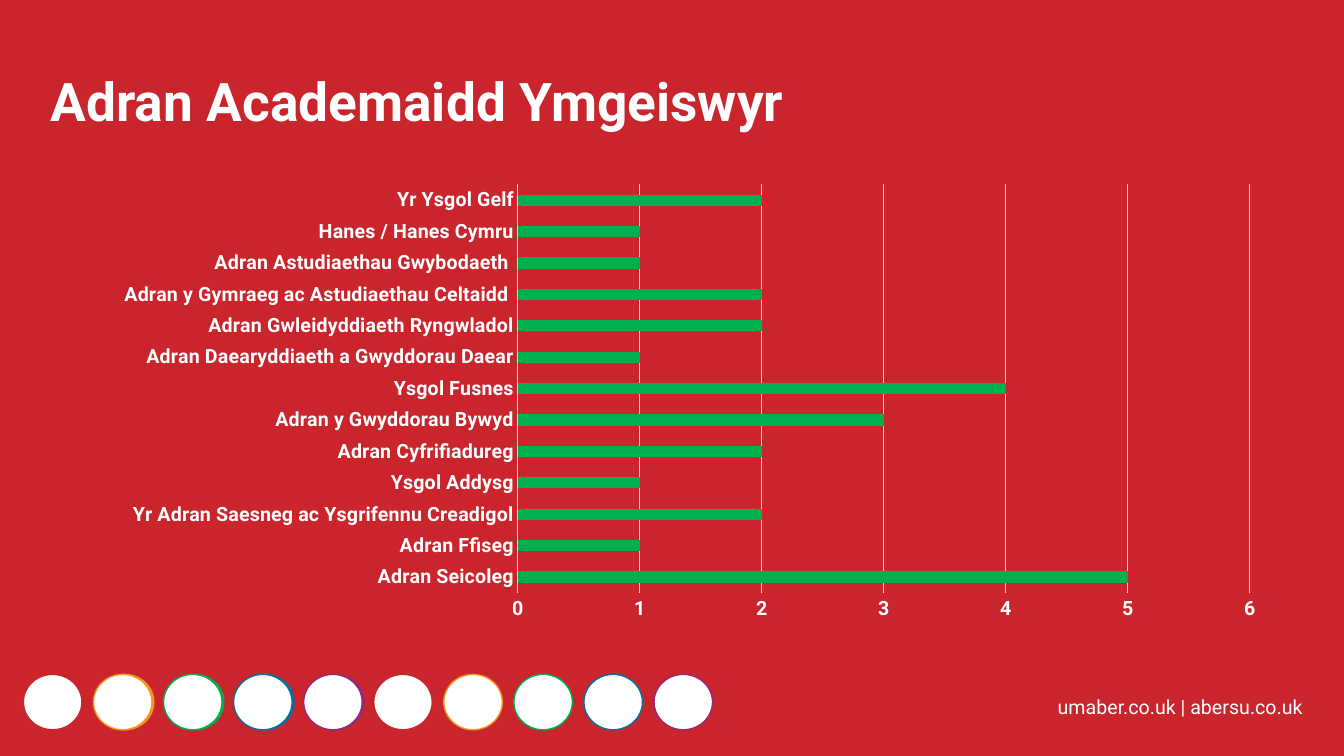
"""Build the slide on candidates' academic departments."""
from pptx import Presentation
from pptx.chart.data import CategoryChartData
from pptx.dml.color import RGBColor
from pptx.enum.chart import XL_CHART_TYPE, XL_TICK_MARK
from pptx.enum.shapes import MSO_SHAPE
from pptx.enum.text import MSO_ANCHOR, MSO_AUTO_SIZE, PP_ALIGN
from pptx.util import Pt

HEADING = "Adran Academaidd Ymgeiswyr"
WEBSITES = "umaber.co.uk | abersu.co.uk"
DEPARTMENTS = [
    ("Adran Seicoleg", 5),
    ("Adran Ffiseg", 1),
    ("Yr Adran Saesneg ac Ysgrifennu Creadigol", 2),
    ("Ysgol Addysg", 1),
    ("Adran Cyfrifiadureg", 2),
    ("Adran y Gwyddorau Bywyd", 3),
    ("Ysgol Fusnes", 4),
    ("Adran Daearyddiaeth a Gwyddorau Daear", 1),
    ("Adran Gwleidyddiaeth Ryngwladol", 2),
    ("Adran y Gymraeg ac Astudiaethau Celtaidd ", 2),
    ("Adran Astudiaethau Gwybodaeth ", 1),
    ("Hanes / Hanes Cymru", 1),
    ("Yr Ysgol Gelf", 2),
]
COLOURS = {
    "red": "CA252C",
    "orange": "F7941F",
    "green": "00AF50",
    "blue": "0171A3",
    "purple": "95277D",
    "white": "FFFFFF",
    "grid": "D9D9D9",
}
RING_COLOURS = ["red", "orange", "green", "blue", "purple"]
FONT = "Roboto"
RING_STEP, RING_TOP, RING_WIDTH, RING_HEIGHT = 50.05, 481.7, 41.8, 39.6


def rgb(name):
    return RGBColor.from_string(COLOURS[name])


def style_font(font, size, bold):
    font.name, font.size, font.bold = FONT, Pt(size), bold
    font.color.rgb = rgb("white")


def write(shape, text, size=14, bold=False, spacing=None, fit=MSO_AUTO_SIZE.NONE):
    frame = shape.text_frame
    frame.word_wrap = True
    frame.auto_size = fit
    frame.vertical_anchor = MSO_ANCHOR.TOP
    paragraph = frame.paragraphs[0]
    paragraph.alignment = PP_ALIGN.LEFT
    paragraph.line_spacing = spacing
    run = paragraph.add_run()
    run.text = text
    style_font(run.font, size, bold)


def add_circles(slide, left, rings, fill=None):
    for index, ring in enumerate(rings):
        circle = slide.shapes.add_shape(
            MSO_SHAPE.OVAL, Pt(left + index * RING_STEP), Pt(RING_TOP),
            Pt(RING_WIDTH), Pt(RING_HEIGHT))
        circle.shadow.inherit = False
        circle.fill.solid()
        circle.fill.fore_color.rgb = rgb(fill or ring)
        circle.line.color.rgb = rgb(ring)
        circle.line.width = Pt(1)


def add_department_chart(slide):
    data = CategoryChartData(number_format="General")
    data.categories = [department for department, _ in DEPARTMENTS]
    data.add_series("Series 1", [count for _, count in DEPARTMENTS])
    chart = slide.shapes.add_chart(
        XL_CHART_TYPE.BAR_CLUSTERED, Pt(72), Pt(125.3), Pt(841.7), Pt(324.7), data).chart
    chart.has_legend = chart.has_title = False
    style_font(chart.font, 14, True)

    bars = chart.plots[0]
    bars.gap_width = 182
    bars.vary_by_categories = False
    bars.series[0].format.fill.solid()
    bars.series[0].format.fill.fore_color.rgb = rgb("green")

    departments, counts = chart.category_axis, chart.value_axis
    for axis in (departments, counts):
        axis.major_tick_mark = axis.minor_tick_mark = XL_TICK_MARK.NONE
        style_font(axis.tick_labels.font, 14, True)
    counts.minimum_scale, counts.maximum_scale, counts.major_unit = 0, 6, 1
    counts.format.line.fill.background()
    counts.has_major_gridlines = True
    for line in (departments.format.line, counts.major_gridlines.format.line):
        line.color.rgb = rgb("grid")
        line.width = Pt(0.75)


def main():
    deck = Presentation()
    deck.slide_width, deck.slide_height = Pt(960), Pt(540)
    slide = deck.slides.add_slide(deck.slide_layouts[5])
    slide.background.fill.solid()
    slide.background.fill.fore_color.rgb = rgb("red")

    heading = slide.shapes.title
    heading.left, heading.top, heading.width, heading.height = Pt(28.8), Pt(50.4), Pt(822.2), Pt(63.4)
    write(heading, HEADING, size=38, bold=True, spacing=0.9)

    websites = slide.shapes.add_textbox(Pt(748.4), Pt(492.5), Pt(201.6), Pt(24.5))
    write(websites, WEBSITES, fit=MSO_AUTO_SIZE.SHAPE_TO_FIT_TEXT)

    add_circles(slide, 18, RING_COLOURS)
    add_circles(slide, 16.7, RING_COLOURS * 2, fill="white")
    add_department_chart(slide)
    deck.save("out.pptx")


if __name__ == "__main__":
    main()
